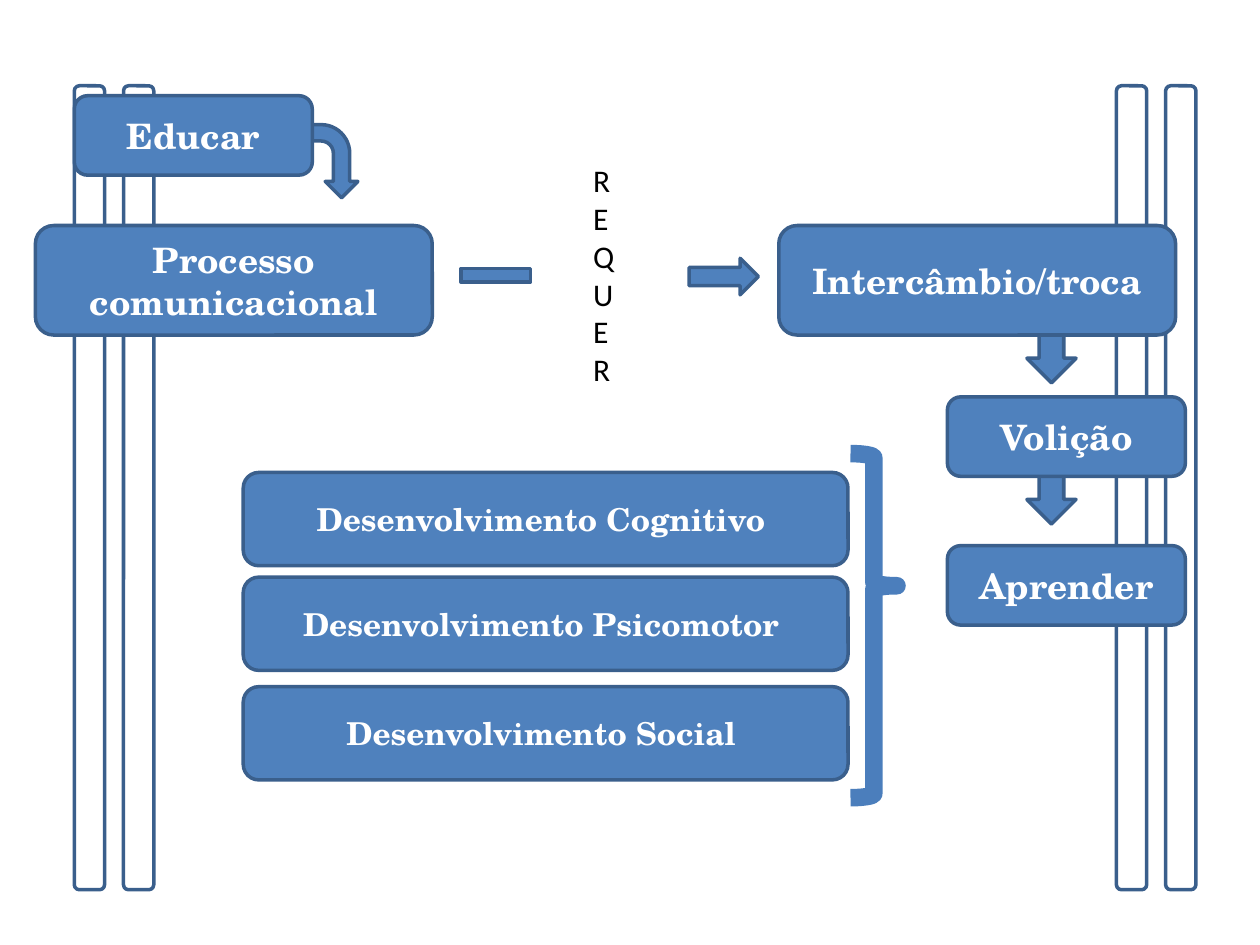
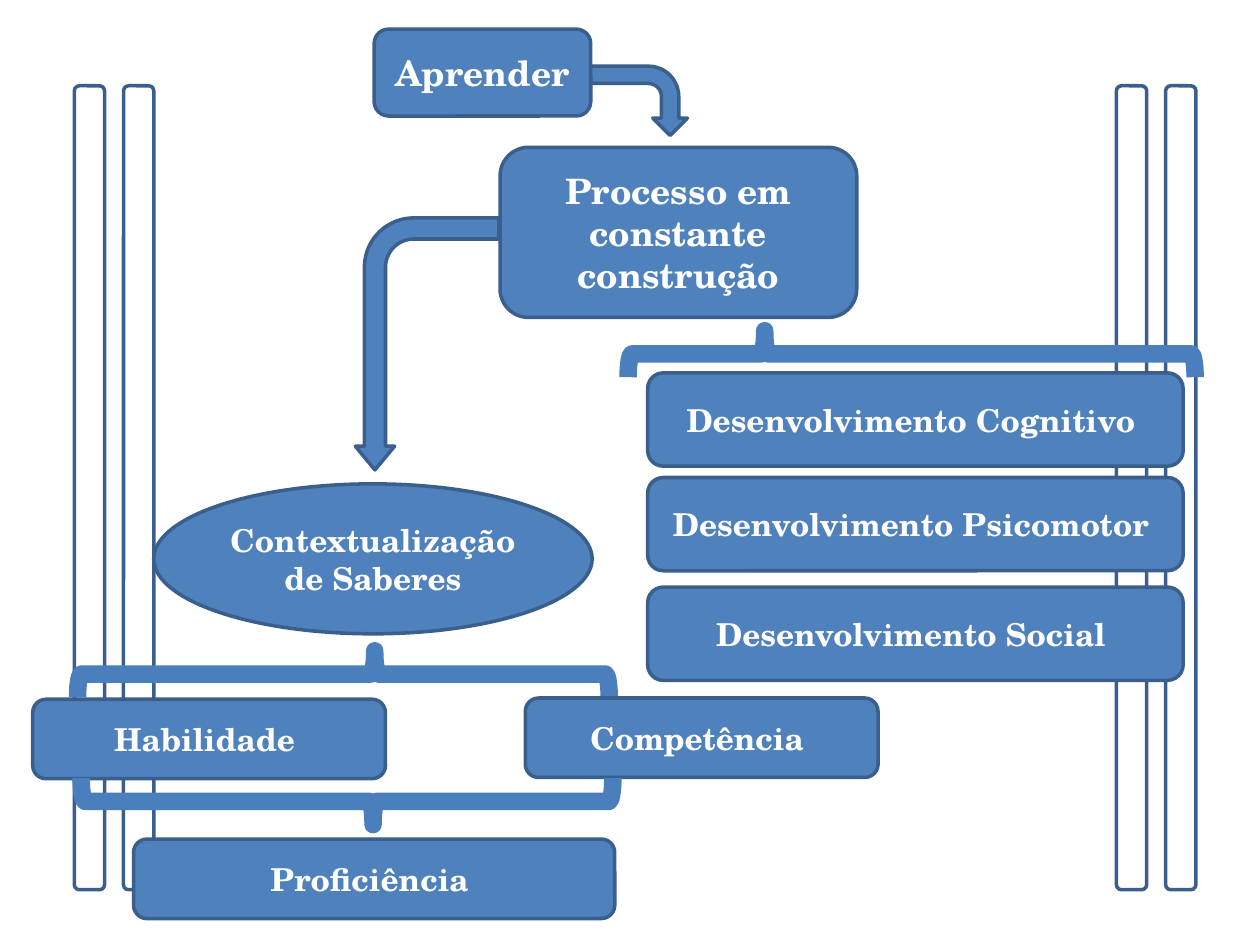
import pptx
import pptx.util
import pptx.dml.color
import pptx.enum.shapes
import pptx.enum.text

Pt = pptx.util.Pt
KIND = pptx.enum.shapes.MSO_SHAPE
ALIGN = pptx.enum.text.PP_ALIGN
ANCHOR = pptx.enum.text.MSO_ANCHOR
HUES = {"fill": "4F81BD", "edge": "3A5F8C", "brace": "4B7EBC",
        "white": "FFFFFF", "black": "000000"}
FONT = "TeX Gyre Schola"
CARD = (136, 45.4)
STEP = (226.8, 62.6)
TIP = (28.1, 33.8)
SKILLS = ("Cognitivo", "Psicomotor", "Social")


def hue(name):
    return pptx.dml.color.RGBColor.from_string(HUES[name])


def style(para, size, font, color, bold):
    for run in para.runs:
        run.font.size = Pt(size)
        run.font.name = font
        run.font.bold = bold
        run.font.color.rgb = hue(color)


def draw(slide, kind, spot, size, turn=0, fill="fill", edge="edge", width=2, adjust=()):
    shape = slide.shapes.add_shape(kind, *(Pt(n) for n in (*spot, *size)))
    shape.shadow.inherit = False
    shape.rotation = turn
    for i, value in enumerate(adjust):
        shape.adjustments[i] = value
    if fill:
        shape.fill.solid()
        shape.fill.fore_color.rgb = hue(fill)
    else:
        shape.fill.background()
    shape.line.color.rgb = hue(edge)
    shape.line.width = Pt(width)
    return shape


def label(slide, text, spot, size, points=20, kind=KIND.ROUNDED_RECTANGLE):
    shape = draw(slide, kind, spot, size)
    frame = shape.text_frame
    frame.word_wrap = True
    frame.vertical_anchor = ANCHOR.MIDDLE
    frame.text = text
    para = frame.paragraphs[0]
    para.alignment = ALIGN.CENTER
    style(para, points, FONT, "white", True)


def brace(slide, spot, length, turn, middle):
    draw(slide, KIND.LEFT_BRACE, spot, (26.6, length), turn,
         None, "brace", 10, (0.083, middle))


def rails(slide):
    for left in (638, 42.5):
        for shift in (0, 28.1):
            draw(slide, KIND.ROUNDED_RECTANGLE, (left + shift, 49), (17.3, 459.4), fill="white")


def stack(slide, x, y, width):
    for skill, drop in zip(SKILLS, (0, 59.8, 122.4)):
        label(slide, f"Desenvolvimento {skill} ", (x, y + drop), (width, 53.3), 18)


def origin(slide, x, y):
    label(slide, "Processo comunicacional", (x, y + 74.2), STEP)
    draw(slide, KIND.BENT_ARROW, (x + 144.7, y + 18.7), (41.8, 37.4), 90)
    label(slide, "Educar", (x + 22.3, y), CARD)


def link(slide, x, y):
    draw(slide, KIND.RIGHT_ARROW, (x + 130.3, y + 59), (39.6, 20.9))
    draw(slide, KIND.RECTANGLE, (x, y + 64.8), (39.6, 7.9))
    box = slide.shapes.add_textbox(Pt(x + 68.4), Pt(y), Pt(26.6), Pt(138.2))
    frame = box.text_frame
    frame.word_wrap = False
    frame.auto_size = pptx.enum.text.MSO_AUTO_SIZE.SHAPE_TO_FIT_TEXT
    frame.text = "\n".join("REQUER")
    for para in frame.paragraphs:
        style(para, 18, "Calibri", "black", False)


def goal(slide, x, y):
    for drop in (56.1, 136.8):
        draw(slide, KIND.DOWN_ARROW, (x + 141.8, y + drop), TIP)
    label(slide, "Intercâmbio/troca", (x, y), STEP)
    for text, drop in (("Volição", 97.9), ("Aprender", 182.9)):
        label(slide, text, (x + 96.4, y + drop), CARD)


def theme(slide, x, y):
    label(slide, "Processo em constante construção", (x + 72, y + 67.6), (203.8, 97.2))
    draw(slide, KIND.BENT_ARROW, (x + 131.1, y + 12.9), (39.6, 56.2), 90)
    label(slide, "Aprender", (x, y), (123.8, 49.7))


def context(slide, x, y):
    label(slide, "Contextualização de Saberes", (x + 69.1, y + 121),
          (250.6, 85.7), 18, KIND.OVAL)
    bend = draw(slide, KIND.BENT_ARROW, (x + 153.4, y), (144, 82.1), 90,
                adjust=(0.147, 0.137, 0.165, 0.343))
    bend.element.spPr.xfrm.set("flipV", "1")
    brace(slide, (x + 164.2, y + 77.8), 303.8, 90, 0.441)
    label(slide, "Proficiência ", (x + 57.6, y + 324), (275, 45.4), 18)
    for text, shift, drop in (("Competência ", 281.5, 243.4), ("Habilidade ", 0, 244.1)):
        label(slide, text, (x + shift, y + drop), (201.6, 45.4), 18)
    brace(slide, (x + 166.3, y + 150.5), 303.8, 270, 0.549)


def exchange(slide):
    rails(slide)
    origin(slide, 20.2, 54.7)
    link(slide, 263.5, 88.6)
    goal(slide, 445, 128.9)
    brace(slide, (486, 259.2), 196.6, 180, 0.616)
    stack(slide, 139, 270, 345.6)


def learning(slide):
    rails(slide)
    brace(slide, (507.6, 40.3), 324, 90, 0.759)
    stack(slide, 370.1, 213.1, 306)
    theme(slide, 213.8, 16.6)
    context(slide, 18.7, 155.5)


def main():
    deck = pptx.Presentation()
    deck.slide_width, deck.slide_height = Pt(720), Pt(540)
    for build in (exchange, learning):
        build(deck.slides.add_slide(deck.slide_layouts[6]))
    deck.save("out.pptx")


if __name__ == "__main__":
    main()
